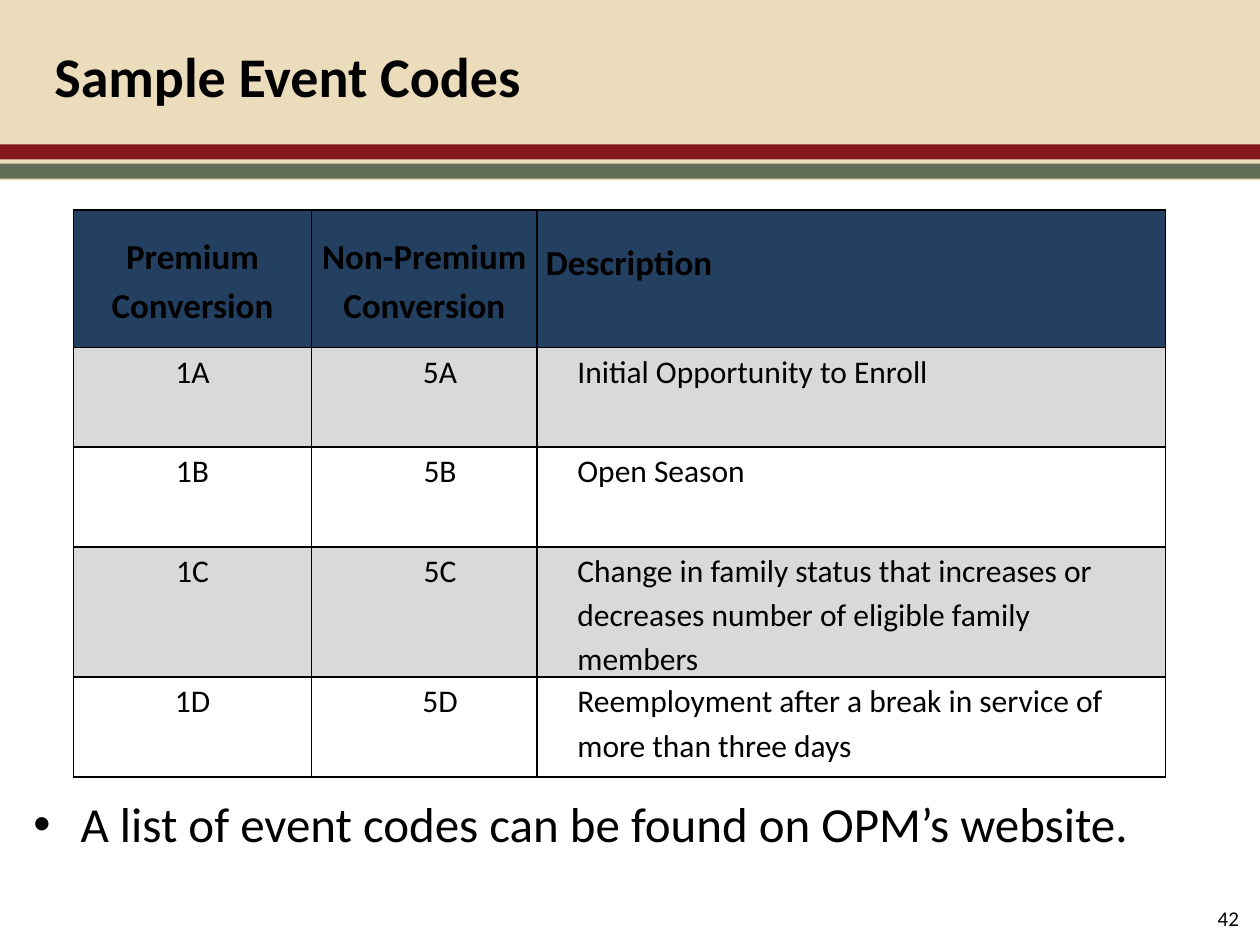
"""Build the sample event codes slide."""
import pptx
import pptx.dml.color
import pptx.enum.shapes
import pptx.enum.text
import pptx.oxml
import pptx.oxml.ns
import pptx.util

Pt = pptx.util.Pt
RGBColor = pptx.dml.color.RGBColor
ALIGN = pptx.enum.text.PP_ALIGN
ANCHOR = pptx.enum.text.MSO_ANCHOR

BLACK = RGBColor(0x00, 0x00, 0x00)
SAND = RGBColor(0xEB, 0xDC, 0xBB)
RED = RGBColor(0x84, 0x18, 0x1B)
GREEN = RGBColor(0x61, 0x6F, 0x57)
NAVY = RGBColor(0x24, 0x40, 0x61)
GRAY = RGBColor(0xD9, 0xD9, 0xD9)

FONT = "Calibri"
SLIDE_WIDTH, SLIDE_HEIGHT = 720, 540
TITLE = "Sample Event Codes"
NOTE = "A list of event codes can be found on OPM’s website."
PAGE_NUMBER = "42"
BANDS = [(0, 103, SAND), (82.5, 8.6, RED), (93.5, 8.6, GREEN)]
HEADERS = ["Premium Conversion", "Non-Premium Conversion", "Description"]
EVENTS = [
    ("1A", "5A", "Initial Opportunity to Enroll"),
    ("1B", "5B", "Open Season"),
    ("1C", "5C", "Change in family status that increases or decreases number of eligible family members"),
    ("1D", "5D", "Reemployment after a break in service of more than three days"),
]
TABLE_LEFT, TABLE_TOP = 42, 120
COLUMN_WIDTHS = [136, 129, 359]
HEADER_HEIGHT, ROW_HEIGHT = 78.5, 57
HEADER_ALIGNMENTS = [ALIGN.CENTER, ALIGN.CENTER, ALIGN.JUSTIFY]
BODY_ALIGNMENTS = [ALIGN.CENTER, ALIGN.CENTER, ALIGN.LEFT]
BODY_INDENTS = [0, 18, 18]


def write_text(frame, text, *, size, bold=False, alignment=ALIGN.LEFT, anchor=ANCHOR.TOP,
               line_spacing=None, indent=0, bullet=None):
    frame.word_wrap = True
    frame.vertical_anchor = anchor
    paragraph = frame.paragraphs[0]
    paragraph.text = text
    paragraph.alignment = alignment
    paragraph.line_spacing = line_spacing
    properties = paragraph._p.get_or_add_pPr()
    properties.set("marL", str(Pt(indent)))
    if bullet:
        properties.set("indent", str(-Pt(indent)))
        namespace = pptx.oxml.ns.nsdecls("a")
        properties.append(pptx.oxml.parse_xml(f'<a:buFont {namespace} typeface="Arial"/>'))
        properties.append(pptx.oxml.parse_xml(f'<a:buChar {namespace} char="{bullet}"/>'))
    font = paragraph.runs[0].font
    font.name, font.size, font.bold = FONT, Pt(size), bold
    font.color.rgb = BLACK


def add_text(slide, text, left, top, width, height, **text_format):
    box = slide.shapes.add_textbox(Pt(left), Pt(top), Pt(width), Pt(height))
    write_text(box.text_frame, text, **text_format)


def add_band(slide, top, height, color):
    band = slide.shapes.add_shape(pptx.enum.shapes.MSO_SHAPE.RECTANGLE,
                                  0, Pt(top), Pt(SLIDE_WIDTH), Pt(height))
    band.shadow.inherit = False
    band.fill.solid()
    band.fill.fore_color.rgb = color
    band.line.fill.background()


def style_cell(cell, color):
    cell.margin_left = cell.margin_right = Pt(5)
    cell.margin_top = cell.margin_bottom = 0
    if color is None:
        cell.fill.background()
    else:
        cell.fill.solid()
        cell.fill.fore_color.rgb = color
    properties = cell._tc.get_or_add_tcPr()
    for position, side in enumerate("LRTB"):
        properties.insert(position, pptx.oxml.parse_xml(
            f'<a:ln{side} {pptx.oxml.ns.nsdecls("a")} w="{Pt(1)}"><a:solidFill>'
            f'<a:srgbClr val="{BLACK}"/></a:solidFill></a:ln{side}>'))


def add_event_table(slide):
    heights = [HEADER_HEIGHT] + [ROW_HEIGHT] * len(EVENTS)
    table = slide.shapes.add_table(len(heights), len(HEADERS), Pt(TABLE_LEFT), Pt(TABLE_TOP),
                                   Pt(sum(COLUMN_WIDTHS)), Pt(sum(heights))).table
    for column, width in zip(table.columns, COLUMN_WIDTHS):
        column.width = Pt(width)
    for row, height in zip(table.rows, heights):
        row.height = Pt(height)
    for column, header in enumerate(HEADERS):
        cell = table.cell(0, column)
        style_cell(cell, NAVY)
        is_description = header == "Description"
        write_text(cell.text_frame, header, size=20, bold=True, line_spacing=1.15,
                   alignment=HEADER_ALIGNMENTS[column])
        cell.vertical_anchor = ANCHOR.TOP if is_description else ANCHOR.MIDDLE
        if is_description:
            cell.margin_top = Pt(14.5)
    for row, event in enumerate(EVENTS, start=1):
        for column, text in enumerate(event):
            cell = table.cell(row, column)
            style_cell(cell, GRAY if row % 2 else None)
            write_text(cell.text_frame, text, size=18, line_spacing=1.15,
                       alignment=BODY_ALIGNMENTS[column], indent=BODY_INDENTS[column])
            cell.vertical_anchor = ANCHOR.TOP


def main():
    presentation = pptx.Presentation()
    presentation.slide_width, presentation.slide_height = Pt(SLIDE_WIDTH), Pt(SLIDE_HEIGHT)
    slide = presentation.slides.add_slide(presentation.slide_layouts[6])
    for top, height, color in BANDS:
        add_band(slide, top, height, color)
    add_text(slide, TITLE, 24, 0, 590, 86.4, size=32, bold=True, anchor=ANCHOR.MIDDLE)
    add_event_table(slide)
    add_text(slide, NOTE, 12, 450, 684, 54, size=28, indent=27, bullet="•")
    add_text(slide, PAGE_NUMBER, 547, 514, 168, 37.4, size=12, alignment=ALIGN.RIGHT)
    presentation.save("out.pptx")


if __name__ == "__main__":
    main()
